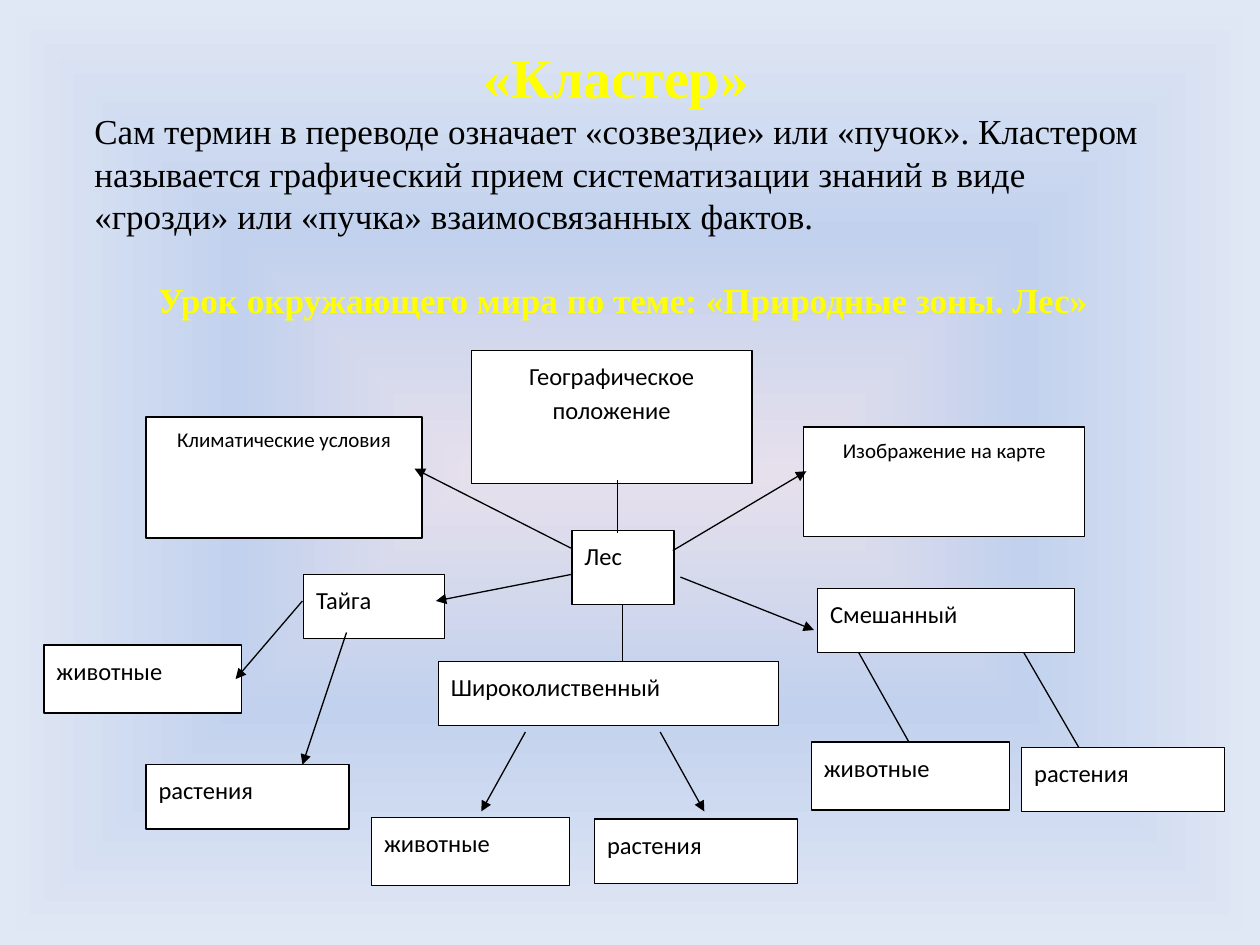
"""Build a cluster diagram slide about forest zones."""
from typing import NamedTuple

from lxml import etree
from pptx import Presentation
from pptx import util as u
from pptx.dml.color import RGBColor
from pptx.enum import shapes, text
from pptx.oxml import parse_xml
from pptx.oxml.ns import nsdecls, qn

BLACK = RGBColor(0, 0, 0)
WHITE = RGBColor(255, 255, 255)
YELLOW = RGBColor(255, 255, 0)
STOPS = ((0, RGBColor(0xE6, 0xE0, 0xEC)),
         (50, RGBColor(0xC2, 0xD1, 0xED)),
         (100, RGBColor(0xE1, 0xE8, 0xF5)))
LEFT, MID = text.PP_ALIGN.LEFT, text.PP_ALIGN.CENTER
SERIF, SANS = "Times New Roman", "Calibri"


class Box(NamedTuple):
    words: str
    x: float
    y: float
    w: float
    h: float = 0.51
    size: int = 14
    align: text.PP_ALIGN = LEFT


class Link(NamedTuple):
    x1: float
    y1: float
    x2: float
    y2: float
    arrow: bool = True


UNDER = (
    Link(4.94, 4.66, 4.94, 5.51),
    Link(6.81, 5.17, 7.36, 6.15),
    Link(8.12, 5.17, 8.63, 6.05),
)
TOPICS = (
    Box("Тайга", 2.41, 4.56, 1.12),
    Box("Широколиственный", 3.48, 5.25, 2.7),
    Box("Смешанный", 6.49, 4.67, 2.04),
    Box("Лес", 4.54, 4.21, 0.81, 0.59),
    Box("Изображение на карте", 6.38, 3.39, 2.23, 0.87, 12, MID),
    Box("Географическое положение", 3.74, 2.78, 2.23, 1.06, 14, MID),
    Box("Климатические условия", 1.16, 3.31, 2.19, 0.96, 12, MID),
)
FAUNA = [Box("животные", x, y, 1.57, 0.54)
         for x, y in ((0.35, 5.12), (6.44, 5.89), (2.95, 6.49))]
FLORA = [Box("растения", x, y, 1.61)
         for x, y in ((1.16, 6.07), (4.72, 6.5), (8.11, 5.93))]
OVER = (
    Link(4.9, 4.23, 4.9, 3.81, False),
    Link(4.53, 4.35, 3.29, 3.72),
    Link(4.53, 4.56, 3.46, 4.77),
    Link(5.34, 4.37, 6.4, 3.74),
    Link(5.4, 4.58, 6.46, 5),
    Link(4.17, 5.81, 3.82, 6.44),
    Link(5.24, 5.81, 5.59, 6.44),
    Link(2.75, 5.02, 2.4, 6.07),
    Link(2.4, 4.77, 1.87, 5.39),
)


def write(para, words: str, *, font: str = SERIF, size: int = 20,
          color: RGBColor = BLACK, bold: bool = False,
          align: text.PP_ALIGN = LEFT, line: float = 1.0,
          before: float = 0, after: float = 0) -> None:
    para.alignment, para.line_spacing = align, line
    para.space_before, para.space_after = u.Pt(before), u.Pt(after)
    run = para.add_run()
    run.text = words
    run.font.name, run.font.size, run.font.bold = font, u.Pt(size), bold
    run.font.color.rgb = color


def ink(line) -> None:
    line.color.rgb, line.width = BLACK, u.Pt(0.75)


def draw_box(slide, box: Box) -> None:
    place = map(u.Inches, (box.x, box.y, box.w, box.h))
    shape = slide.shapes.add_shape(shapes.MSO_SHAPE.RECTANGLE, *place)
    shape.shadow.inherit = False
    shape.fill.solid()
    shape.fill.fore_color.rgb = WHITE
    ink(shape.line)
    frame = shape.text_frame
    frame.word_wrap = True
    frame.vertical_anchor = text.MSO_ANCHOR.TOP
    write(frame.paragraphs[0], box.words, font=SANS, size=box.size,
          align=box.align, line=1.15, after=10)


def draw_link(slide, link: Link) -> None:
    ends = map(u.Inches, link[:4])
    wire = slide.shapes.add_connector(shapes.MSO_CONNECTOR.STRAIGHT, *ends)
    ink(wire.line)
    props = wire.element.spPr
    if link.arrow:
        etree.SubElement(props.find(qn("a:ln")), qn("a:tailEnd"), type="triangle")
    etree.SubElement(props, qn("a:effectLst"))


def paint(slide) -> None:
    slide.background.fill.gradient()
    old = slide.element.find(".//" + qn("a:gradFill"))
    stops = "".join(f'<a:gs pos="{pos * 1000}"><a:srgbClr val="{hue}"/></a:gs>'
                    for pos, hue in STOPS)
    new = parse_xml(
        f'<a:gradFill {nsdecls("a")} rotWithShape="1"><a:gsLst>{stops}</a:gsLst>'
        '<a:path path="shape"><a:fillToRect l="50000" t="50000" r="50000" b="50000"/>'
        '</a:path></a:gradFill>')
    old.getparent().replace(old, new)


def draw_head(slide) -> None:
    place = map(u.Inches, (0.65, 0.29, 8.59, 2.32))
    frame = slide.shapes.add_textbox(*place).text_frame
    frame.word_wrap = True
    frame.auto_size = text.MSO_AUTO_SIZE.SHAPE_TO_FIT_TEXT
    write(frame.paragraphs[0], "«Кластер» ", size=32, color=YELLOW,
          bold=True, align=MID)
    write(frame.add_paragraph(),
          "Сам термин в переводе означает «созвездие» или «пучок». Кластером "
          "называется графический прием систематизации знаний в виде "
          "«грозди» или «пучка» взаимосвязанных фактов.")
    write(frame.add_paragraph(),
          "Урок окружающего мира по теме: «Природные зоны. Лес»",
          color=YELLOW, bold=True, align=MID, before=24)


def main() -> None:
    deck = Presentation()
    deck.slide_width, deck.slide_height = u.Inches(10), u.Inches(7.5)
    slide = deck.slides.add_slide(deck.slide_layouts[6])
    paint(slide)
    for link in UNDER:
        draw_link(slide, link)
    for box in (*TOPICS, *FAUNA, *FLORA):
        draw_box(slide, box)
    for link in OVER:
        draw_link(slide, link)
    draw_head(slide)
    deck.save("out.pptx")


if __name__ == "__main__":
    main()
